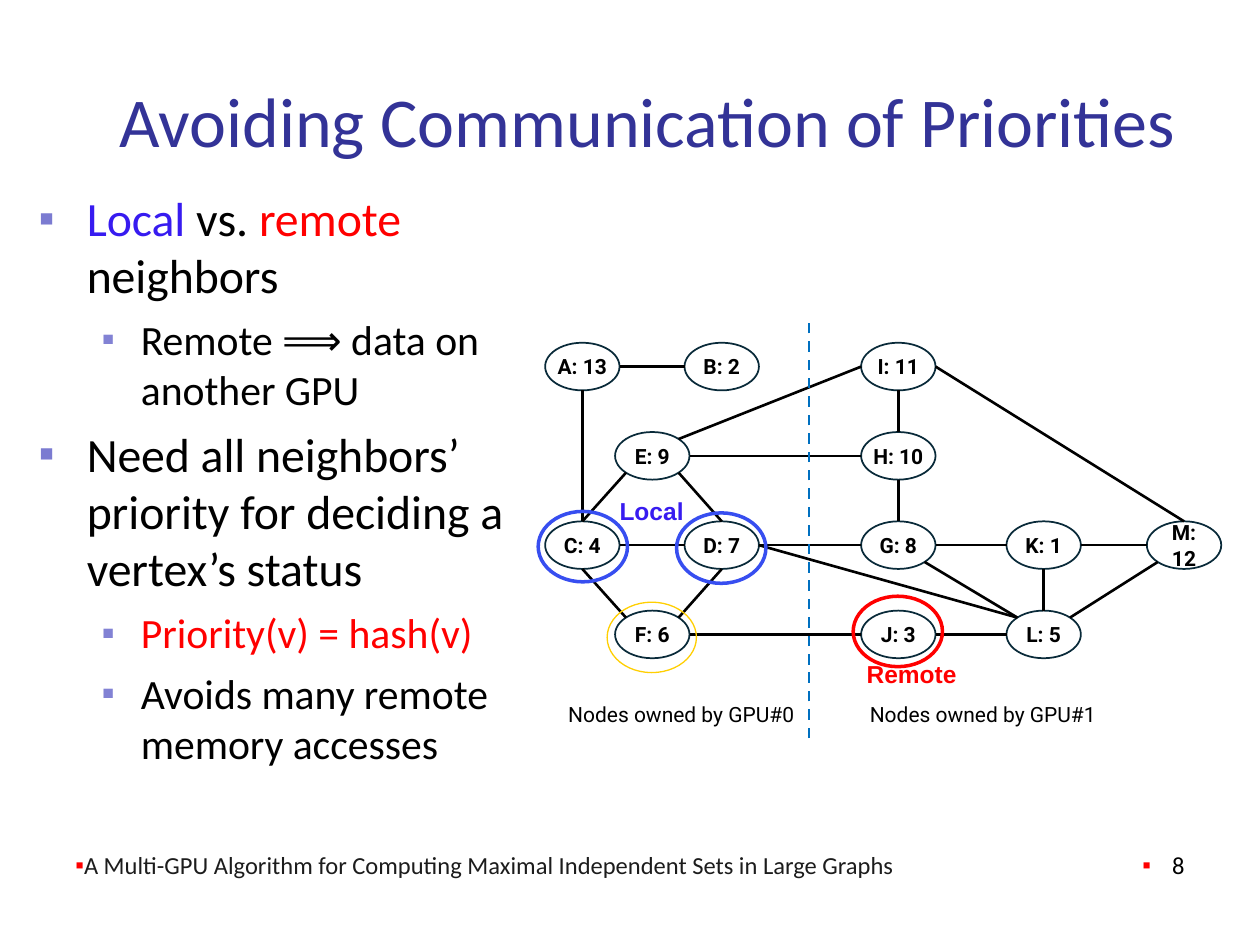
import math
from dataclasses import dataclass

from lxml import etree
from pptx import Presentation
from pptx import util as u
from pptx.dml.color import RGBColor
from pptx.enum import dml, shapes, text
from pptx.oxml import ns

BLACK, BLUE, RED = "000000", "371BF0", "FF0000"
RING_BLUE = "374EF0"
NODE_WIDTH, NODE_HEIGHT = 1.5, 0.96
RING_WIDTH, RING_HEIGHT = 1.8, 1.42
COLUMNS = {"left": 11.74, "middle": 13.15, "right": 14.55,
           "remote": 18.11, "far": 21.04, "last": 23.87}
FIRST_ROW, ROW_STEP = 7.39, 1.8
COMPASS = ["e", "se", "s", "sw", "w", "nw", "n", "ne"]


@dataclass
class Node:
    label: str
    column: str
    row: int

    @property
    def center(self) -> tuple[float, float]:
        return COLUMNS[self.column], FIRST_ROW + ROW_STEP * self.row

    def site(self, direction: str) -> tuple[float, float]:
        """Point on the outline in a compass direction."""
        angle = COMPASS.index(direction) * math.pi / 4
        x, y = self.center
        return (x + NODE_WIDTH / 2 * math.cos(angle),
                y + NODE_HEIGHT / 2 * math.sin(angle))


@dataclass
class Bullet:
    runs: list[tuple[str, str]]
    level: int = 0


@dataclass
class Label:
    words: str
    box: tuple[float, float, float, float]
    size: float
    color: str
    font: str = "Calibri"
    bold: bool = False
    wrap: bool = True
    align: text.PP_ALIGN = text.PP_ALIGN.LEFT
    anchor: text.MSO_ANCHOR = text.MSO_ANCHOR.TOP
    insets: tuple[float, float, float, float] = (0.25, 0.13, 0.25, 0.13)


NODES = {node.label[0]: node for node in [
    Node("A: 13", "left", 0), Node("B: 2", "right", 0), Node("C: 4", "left", 2),
    Node("D: 7", "right", 2), Node("E: 9", "middle", 1), Node("F: 6", "middle", 3),
    Node("I: 11", "remote", 0), Node("H: 10", "remote", 1), Node("G: 8", "remote", 2),
    Node("J: 3", "remote", 3), Node("K: 1", "far", 2), Node("L: 5", "far", 3),
    Node("M: 12", "last", 2)]}

# Each edge: node and side it leaves, node and side it reaches
EDGES = ["A e B w", "A s C n", "C e D w", "C s F nw", "D s F ne", "E sw C n",
         "E se D n", "I w E ne", "H w E e", "G w D e", "D e L nw", "J w F e",
         "I s H n", "H s G n", "L w J e", "L nw G se", "K w G e", "M w K e",
         "K s L n", "M sw L ne", "M n I e"]

# Ring center, colour and line width
RINGS = [((13.14, 12.85), "FFCF01", 0.75), ((11.75, 11.02), RING_BLUE, 2),
         ((14.54, 11.05), RING_BLUE, 2), ((18.1, 12.73), RED, 2)]

BULLETS = [
    Bullet([("Local", BLUE), (" vs. ", BLACK), ("remote", RED), (" neighbors", BLACK)]),
    Bullet([("Remote ⟹ data on another GPU", BLACK)], 1),
    Bullet([("Need all neighbors’ priority for deciding a vertex’s status", BLACK)]),
    Bullet([("Priority(v) = hash(v)", RED)], 1),
    Bullet([("Avoids many remote memory accesses", BLACK)], 1)]

# Per level: text size, left margin, hang, bullet colour, bullet size
LEVELS = [(27.3, 0.97, 0.97, "7B7BD1", 95), (23.8, 2.06, 0.79, "8282D4", 90)]

NO_INSETS = (0, 0, 0, 0)
TITLE = Label("Avoiding Communication of Priorities", (1.27, 1.52, 22.86, 1.78), 40,
              "333397", anchor=text.MSO_ANCHOR.MIDDLE, insets=(1.14, 0.13, 0.25, 0.13))
FOOTER = Label("A Multi-GPU Algorithm for Computing Maximal Independent Sets in Large Graphs",
               (1.27, 16.59, 19.23, 1.27), 14, "1C1C1C", anchor=text.MSO_ANCHOR.BOTTOM)
PAGE_NUMBER = Label("8", (18.85, 16.59, 5.28, 1.27), 14, BLACK,
                    align=text.PP_ALIGN.RIGHT, anchor=text.MSO_ANCHOR.BOTTOM)
GRAPH_LABELS = [
    Label(f"Nodes owned by GPU#{number}", (left, 14.14, 4.67, 0.53), 12, BLACK, "Roboto",
          wrap=False, align=text.PP_ALIGN.CENTER, insets=NO_INSETS)
    for number, left in enumerate((11.4, 17.48))
] + [Label("Local", (12.24, 9.86, 1.8, 0.86), 14, BLUE, "Arial", True, False),
     Label("Remote", (17.22, 13.16, 2.34, 0.86), 14, RED, "Arial", True, False)]


def rgb(color: str) -> RGBColor:
    return RGBColor.from_string(color)


def style_font(font, name: str, size: float, color: str, bold: bool = False) -> None:
    font.name, font.size, font.bold = name, u.Pt(size), bold
    font.color.rgb = rgb(color)


def set_insets(frame, insets: tuple[float, float, float, float]) -> None:
    (frame.margin_left, frame.margin_top,
     frame.margin_right, frame.margin_bottom) = map(u.Cm, insets)


def add_bullet(paragraph, color: str, percent: int, margin: float = 0, hang: float = 0) -> None:
    properties = paragraph._p.get_or_add_pPr()
    properties.set("marL", str(u.Cm(margin)))
    properties.set("indent", str(-u.Cm(hang)))
    bullet_color = etree.SubElement(properties, ns.qn("a:buClr"))
    etree.SubElement(bullet_color, ns.qn("a:srgbClr"), val=color)
    etree.SubElement(properties, ns.qn("a:buSzPct"), val=str(percent * 1000))
    etree.SubElement(properties, ns.qn("a:buFont"), typeface="Arial")
    etree.SubElement(properties, ns.qn("a:buChar"), char="▪")


def add_label(slide, label: Label):
    shape = slide.shapes.add_textbox(*map(u.Cm, label.box))
    frame = shape.text_frame
    frame.text = label.words
    frame.word_wrap, frame.vertical_anchor = label.wrap, label.anchor
    set_insets(frame, label.insets)
    paragraph = frame.paragraphs[0]
    paragraph.alignment = label.align
    style_font(paragraph.runs[0].font, label.font, label.size, label.color, label.bold)
    return paragraph


def add_body(slide) -> None:
    frame = slide.shapes.add_textbox(*map(u.Cm, (0.53, 3.68, 10.46, 12.9))).text_frame
    frame.word_wrap = True
    for index, bullet in enumerate(BULLETS):
        size, margin, hang, color, percent = LEVELS[bullet.level]
        paragraph = frame.add_paragraph() if index else frame.paragraphs[0]
        paragraph.level = bullet.level
        add_bullet(paragraph, color, percent, margin, hang)
        if index:
            paragraph.space_before = u.Pt(6)
        for words, run_color in bullet.runs:
            run = paragraph.add_run()
            run.text = words
            style_font(run.font, "Calibri", size, run_color)


def add_ellipse(slide, center: tuple[float, float], width: float, height: float,
                color: str, line_width: float):
    x, y = center
    shape = slide.shapes.add_shape(shapes.MSO_SHAPE.OVAL, u.Cm(x - width / 2),
                                   u.Cm(y - height / 2), u.Cm(width), u.Cm(height))
    shape.shadow.inherit = False
    shape.fill.background()
    shape.line.color.rgb = rgb(color)
    shape.line.width = u.Pt(line_width)
    return shape


def add_node(slide, node: Node) -> None:
    shape = add_ellipse(slide, node.center, NODE_WIDTH, NODE_HEIGHT, "092A39", 1)
    frame = shape.text_frame
    frame.text = node.label
    frame.word_wrap, frame.vertical_anchor = True, text.MSO_ANCHOR.MIDDLE
    set_insets(frame, NO_INSETS)
    paragraph = frame.paragraphs[0]
    paragraph.alignment = text.PP_ALIGN.CENTER
    style_font(paragraph.runs[0].font, "Roboto", 12, BLACK, True)


def add_line(slide, start: tuple[float, float], end: tuple[float, float], color: str = BLACK):
    connector = slide.shapes.add_connector(shapes.MSO_CONNECTOR.STRAIGHT,
                                           *map(u.Cm, start + end))
    connector.line.color.rgb = rgb(color)
    connector.line.width = u.Pt(1.5)
    etree.SubElement(connector._element.spPr, ns.qn("a:effectLst"))
    return connector


def main() -> None:
    presentation = Presentation()
    presentation.slide_width, presentation.slide_height = u.Cm(25.4), u.Cm(19.05)
    slide = presentation.slides.add_slide(presentation.slide_layouts[6])

    # Title and bullets
    add_label(slide, TITLE)
    add_body(slide)

    # Graph
    for node in NODES.values():
        add_node(slide, node)
    for edge in EDGES:
        first, leaving, second, reaching = edge.split()
        add_line(slide, NODES[first].site(leaving), NODES[second].site(reaching))
    divider = add_line(slide, (16.31, 14.88), (16.31, 6.48), "0070C0")
    divider.line.dash_style = dml.MSO_LINE.DASH

    # Highlights and captions
    for center, color, line_width in RINGS:
        add_ellipse(slide, center, RING_WIDTH, RING_HEIGHT, color, line_width)
    for label in GRAPH_LABELS:
        add_label(slide, label)

    # Footer
    add_bullet(add_label(slide, FOOTER), RED, 100)
    add_bullet(add_label(slide, PAGE_NUMBER), RED, 100, 0.6, 0.6)
    presentation.save("out.pptx")


if __name__ == "__main__":
    main()
